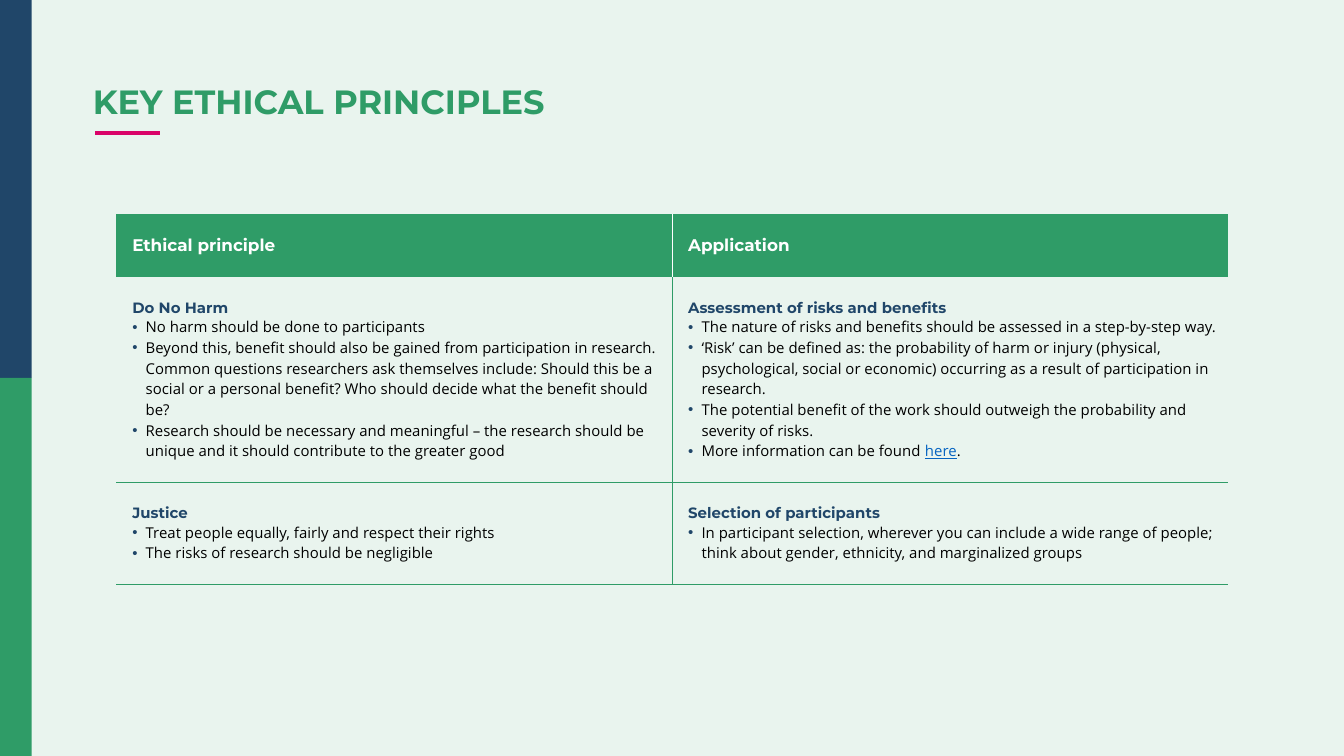
from dataclasses import dataclass

from lxml import etree
from pptx import Presentation
from pptx.dml.color import RGBColor
from pptx.enum import shapes, text
from pptx.oxml import ns
from pptx.util import Pt


@dataclass(frozen=True)
class Theme:
    green: str = "2F9C67"
    navy: str = "204669"
    pink: str = "D90368"
    white: str = "FFFFFF"
    black: str = "000000"
    link: str = "0563C1"
    background: str = "E9F4EE"
    heading_font: str = "Montserrat"
    body_font: str = "Open Sans"
    title_size: float = 18
    header_size: float = 9
    body_size: float = 8
    border: float = 0.5


@dataclass(frozen=True)
class Band:
    top: float
    color: str


@dataclass(frozen=True)
class Entry:
    heading: str
    points: tuple  # each point is a string, or a tuple with the link word second


THEME = Theme()
WIDTH, HEIGHT = 720, 405
BAND_WIDTH, BAND_HEIGHT = 17, HEIGHT / 2
TABLE_LEFT, TABLE_TOP, COLUMN_WIDTH = 62.4, 114.6, 297.8
ROW_HEIGHTS = (33.8, 110, 54.6)
HANG = 7.2
CELL_FORMAT = {"margin_left": Pt(8.5), "margin_right": Pt(5),
               "margin_top": Pt(11.5), "margin_bottom": Pt(11.5)}
TITLE_FORMAT = {"margin_left": 0, "margin_right": Pt(7.2),
                "margin_top": Pt(3.6), "margin_bottom": Pt(3.6), "word_wrap": True}

BANDS = (Band(0, THEME.navy), Band(BAND_HEIGHT, THEME.green))
HEADERS = ("Ethical principle", "Application")
PRINCIPLES = (
    (Entry("Do No Harm", (
        "No harm should be done to participants",
        "Beyond this, benefit should also be gained from participation in research. "
        "Common questions researchers ask themselves include: Should this be a social "
        "or a personal benefit? Who should decide what the benefit should be?",
        "Research should be necessary and meaningful – the research should be unique "
        "and it should contribute to the greater good")),
     Entry("Assessment of risks and benefits", (
         "The nature of risks and benefits should be assessed in a step-by-step way.",
         "‘Risk’ can be defined as: the probability of harm or injury (physical, "
         "psychological, social or economic) occurring as a result of participation "
         "in research.",
         "The potential benefit of the work should outweigh the probability and "
         "severity of risks.",
         ("More information can be found ", "here", ".")))),
    (Entry("Justice", (
        "Treat people equally, fairly and respect their rights",
        "The risks of research should be negligible")),
     Entry("Selection of participants", (
         "In participant selection, wherever you can include a wide range of people; "
         "think about gender, ethnicity, and marginalized groups",))),
)


def rgb(color: str) -> RGBColor:
    return RGBColor.from_string(color)


def add_run(paragraph, words: str, size: float, color: str,
            font: str = THEME.heading_font, bold: bool = True,
            underline: bool = False) -> None:
    run = paragraph.add_run()
    run.text = words
    looks = {"size": Pt(size), "name": font, "bold": bold, "underline": underline}
    for key, value in looks.items():
        setattr(run.font, key, value)
    run.font.color.rgb = rgb(color)


def add_band(slide, band: Band) -> None:
    stripe = slide.shapes.add_shape(shapes.MSO_SHAPE.RECTANGLE, 0, Pt(band.top),
                                    Pt(BAND_WIDTH), Pt(BAND_HEIGHT))
    stripe.shadow.inherit = False
    stripe.fill.solid()
    stripe.fill.fore_color.rgb = rgb(band.color)
    stripe.line.fill.background()


def add_title(slide, words: str) -> None:
    underline = slide.shapes.add_connector(shapes.MSO_CONNECTOR.STRAIGHT,
                                           Pt(51), Pt(71.2), Pt(86), Pt(71.2))
    underline.line.color.rgb = rgb(THEME.pink)
    underline.line.width = Pt(2.25)
    etree.SubElement(underline._element.spPr, ns.qn("a:effectLst"))

    frame = slide.shapes.add_textbox(Pt(49.7), Pt(42.4), Pt(620.6), Pt(26.8)).text_frame
    for key, value in TITLE_FORMAT.items():
        setattr(frame, key, value)
    title = frame.paragraphs[0]
    title.line_spacing = 0.9
    add_run(title, words, THEME.title_size, THEME.green)


def set_borders(cell, borders: dict[str, str]) -> None:
    """Draw the given sides (L, R, T, B) and clear the others."""
    properties = cell._tc.get_or_add_tcPr()
    for side in "LRTB":
        line = etree.SubElement(properties, ns.qn(f"a:ln{side}"), w=str(Pt(THEME.border)))
        if side in borders:
            fill = etree.SubElement(line, ns.qn("a:solidFill"))
            etree.SubElement(fill, ns.qn("a:srgbClr"), val=borders[side])
        else:
            etree.SubElement(line, ns.qn("a:noFill"))


def add_bullet(paragraph) -> None:
    properties = paragraph._p.get_or_add_pPr()
    properties.set("marL", str(Pt(HANG)))
    properties.set("indent", str(-Pt(HANG)))
    color = etree.SubElement(properties, ns.qn("a:buClr"))
    etree.SubElement(color, ns.qn("a:srgbClr"), val=THEME.navy)
    etree.SubElement(properties, ns.qn("a:buFont"), typeface="Arial")
    etree.SubElement(properties, ns.qn("a:buChar"), char="•")


def fill_header(cell, words: str) -> None:
    cell.fill.solid()
    cell.fill.fore_color.rgb = rgb(THEME.green)
    cell.vertical_anchor = text.MSO_ANCHOR.MIDDLE
    add_run(cell.text_frame.paragraphs[0], words, THEME.header_size, THEME.white)


def fill_entry(cell, entry: Entry) -> None:
    cell.fill.background()
    frame = cell.text_frame
    add_run(frame.paragraphs[0], entry.heading, THEME.body_size, THEME.navy)
    for point in entry.points:
        paragraph = frame.add_paragraph()
        add_bullet(paragraph)
        parts = (point,) if isinstance(point, str) else point
        for index, words in enumerate(parts):
            linked = index == 1
            add_run(paragraph, words, THEME.body_size,
                    THEME.link if linked else THEME.black,
                    THEME.body_font, bold=False, underline=linked)


def add_principles(slide) -> None:
    table = slide.shapes.add_table(len(ROW_HEIGHTS), len(HEADERS), Pt(TABLE_LEFT),
                                   Pt(TABLE_TOP), Pt(COLUMN_WIDTH * len(HEADERS)),
                                   Pt(sum(ROW_HEIGHTS))).table
    table.first_row = table.horz_banding = False
    for column in table.columns:
        column.width = Pt(COLUMN_WIDTH)
    for row, height in zip(table.rows, ROW_HEIGHTS):
        row.height = Pt(height)

    for r, contents in enumerate((HEADERS, *PRINCIPLES)):
        for c, content in enumerate(contents):
            cell = table.cell(r, c)
            for key, value in CELL_FORMAT.items():
                setattr(cell, key, value)
            # The inner edge divides the columns; rules run below the body rows
            borders = {"RL"[c]: THEME.green if r else THEME.white}
            if r > 0:
                borders["B"] = THEME.green
            if r > 1:
                borders["T"] = THEME.green
            set_borders(cell, borders)
            (fill_entry if r else fill_header)(cell, content)


def main() -> None:
    deck = Presentation()
    deck.slide_width, deck.slide_height = Pt(WIDTH), Pt(HEIGHT)
    slide = deck.slides.add_slide(deck.slide_layouts[6])
    slide.background.fill.solid()
    slide.background.fill.fore_color.rgb = rgb(THEME.background)

    # Title and side bands
    add_title(slide, "KEY ETHICAL PRINCIPLES")
    for band in BANDS:
        add_band(slide, band)

    # Principles and their application
    add_principles(slide)
    deck.save("out.pptx")


if __name__ == "__main__":
    main()
